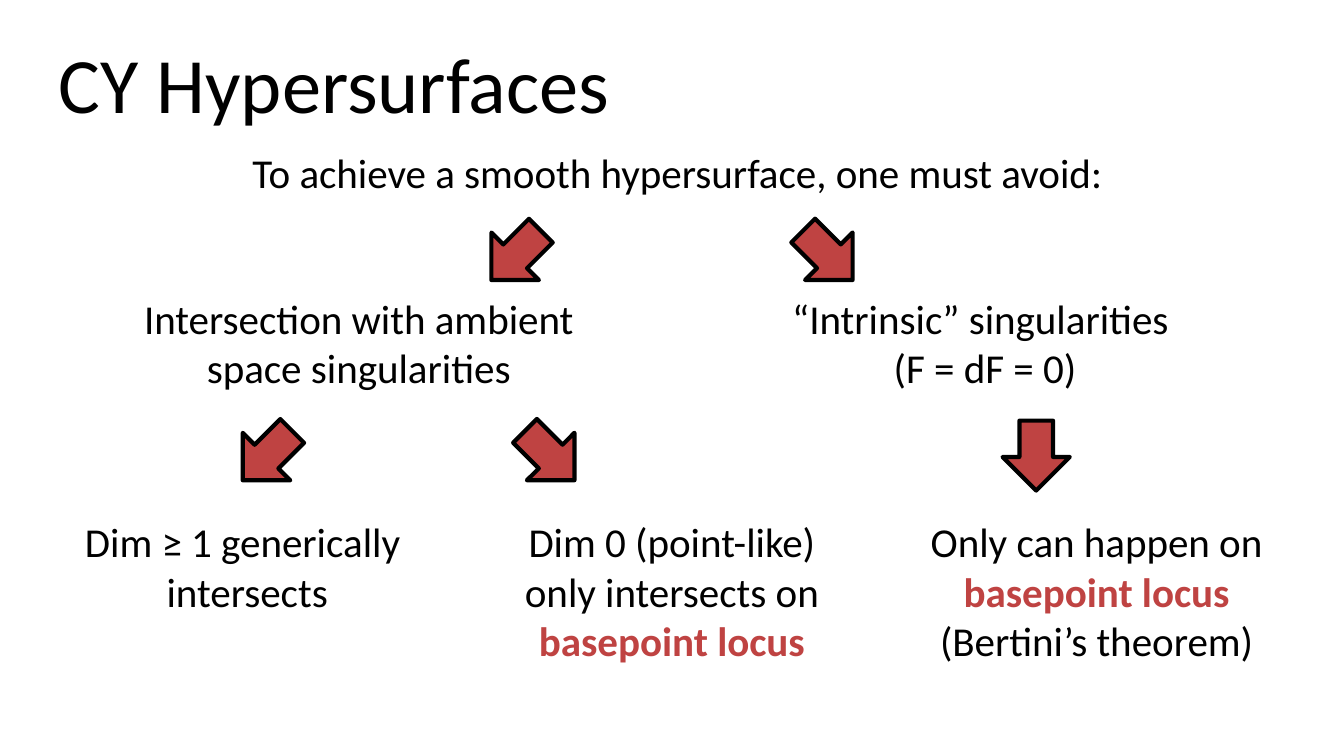
import pptx
import pptx.dml.color
import pptx.enum.shapes
import pptx.enum.text
import pptx.util

PX = 4572
FONT = "Calibri"
BLACK = "000000"
RED = "BF4342"
ARROW_WIDTH, ARROW_HEIGHT = 104, 100
DOWN_LEFT, DOWN, DOWN_RIGHT = 135, 90, 45


def px(length):
    return pptx.util.Emu(length * PX)


def color(value):
    return pptx.dml.color.RGBColor.from_string(value)


def add_text(slide, box, paragraphs, size=22, align="CENTER", anchor="TOP"):
    shape = slide.shapes.add_textbox(*map(px, box))
    text_frame = shape.text_frame
    text_frame.word_wrap = True
    text_frame.vertical_anchor = pptx.enum.text.MSO_ANCHOR[anchor]
    for side in ("left", "top", "right", "bottom"):
        setattr(text_frame, f"margin_{side}", px(20))
    text_frame.text = "\n".join("" for _ in paragraphs)
    for paragraph, parts in zip(text_frame.paragraphs, paragraphs):
        paragraph.alignment = pptx.enum.text.PP_ALIGN[align]
        for part in parts:
            run = paragraph.add_run()
            run.text = part
            emphasized = part.startswith("basepoint locus")
            run.font.name = FONT
            run.font.size = pptx.util.Pt(size)
            run.font.bold = emphasized
            run.font.color.rgb = color(RED if emphasized else BLACK)


def add_arrow(slide, left, top, rotation):
    shape = slide.shapes.add_shape(
        pptx.enum.shapes.MSO_SHAPE.RIGHT_ARROW,
        px(left), px(top), px(ARROW_WIDTH), px(ARROW_HEIGHT),
    )
    shape.rotation = rotation
    shape.shadow.inherit = False
    shape.fill.solid()
    shape.fill.fore_color.rgb = color(RED)
    shape.line.color.rgb = color(BLACK)
    shape.line.width = pptx.util.Pt(2.25)


def add_header(slide, box):
    left, top, width, height = box
    add_text(slide, (left + 42, top, 1864, 186), [["CY Hypersurfaces"]],
             size=42, align="LEFT", anchor="MIDDLE")
    add_text(slide, (left, top + 171, width, height - 171),
             [["To achieve a smooth hypersurface, one must avoid:"]])


def add_tree_level(slide, box, column_width, arrow_gap, arrows, columns):
    left, top, width, height = box
    for offset, rotation in arrows:
        add_arrow(slide, left + offset, top, rotation)
    step = (width - column_width) // (len(columns) - 1)
    for index, paragraphs in enumerate(columns):
        column = (left + index * step, top + arrow_gap,
                  column_width, height - arrow_gap)
        add_text(slide, column, paragraphs)


def main():
    presentation = pptx.Presentation()
    presentation.slide_width = px(2000)
    presentation.slide_height = px(1125)
    slide = presentation.slides.add_slide(presentation.slide_layouts[6])

    add_header(slide, (26, 29, 1964, 285))
    add_tree_level(
        slide, (120, 330, 1760, 275), 828, 87,
        [(596, DOWN_LEFT), (1060, DOWN_RIGHT)],
        [
            [["Intersection with ambient space singularities"]],
            [["“Intrinsic” singularities "], ["(F = dF = 0)"]],
        ],
    )
    add_tree_level(
        slide, (98, 628, 1804, 383), 540, 121,
        [(248, DOWN_LEFT), (668, DOWN_RIGHT), (1392, DOWN)],
        [
            [["Dim ≥ 1 generically "], ["intersects"]],
            [["Dim 0 (point-like) only intersects on ", "basepoint locus"]],
            [["Only can happen on ", "basepoint locus ", "(Bertini’s theorem)"]],
        ],
    )
    presentation.save("out.pptx")


if __name__ == "__main__":
    main()
